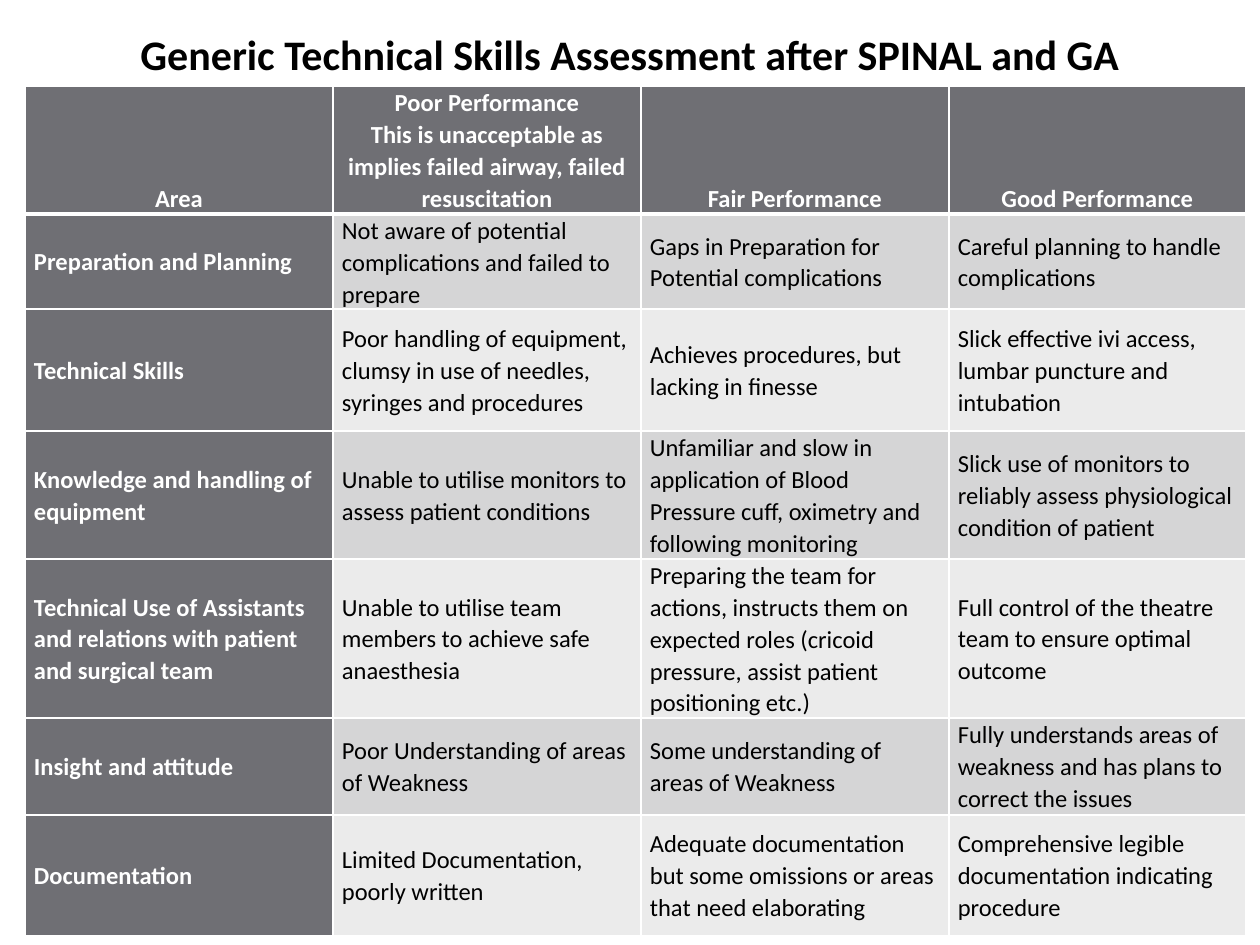
from lxml.etree import SubElement
from pptx import Presentation
from pptx.dml.color import RGBColor
from pptx.enum.text import MSO_ANCHOR, PP_ALIGN
from pptx.oxml.ns import qn
from pptx.util import Pt

PX = 914400 // 126
WHITE, BLACK, GREY = "FFFFFF", "000000", "6F6F74"
BANDS = ["D5D5D6", "EBEBEB"]
COLUMN_WIDTHS = [308, 308, 308, 297]
ROW_HEIGHTS = [128, 95, 122, 128, 159, 97, 121]
ROWS = [
    ["Area",
     "Poor Performance\nThis is unacceptable as implies failed airway, failed resuscitation",
     "Fair Performance",
     "Good Performance"],
    ["Preparation and Planning",
     "Not aware of potential complications and failed to prepare",
     "Gaps in Preparation for Potential complications",
     "Careful planning to handle complications"],
    ["Technical Skills",
     "Poor handling of equipment, clumsy in use of needles, syringes and procedures",
     "Achieves procedures, but lacking in finesse",
     "Slick effective ivi access, lumbar puncture and intubation"],
    ["Knowledge and handling of equipment",
     "Unable to utilise monitors to assess patient conditions",
     "Unfamiliar and slow in application of Blood Pressure cuff, oximetry and following monitoring",
     "Slick use of monitors to reliably assess physiological condition of patient"],
    ["Technical Use of Assistants and relations with patient and surgical team",
     "Unable to utilise team members to achieve safe anaesthesia",
     "Preparing the team for actions, instructs them on expected roles "
     "(cricoid pressure, assist patient positioning etc.)",
     "Full control of the theatre team to ensure optimal outcome"],
    ["Insight and attitude",
     "Poor Understanding of areas of Weakness",
     "Some understanding of areas of Weakness",
     "Fully understands areas of weakness and has plans to correct the issues"],
    ["Documentation",
     "Limited Documentation, poorly written",
     "Adequate documentation but some omissions or areas that need elaborating",
     "Comprehensive legible documentation indicating procedure"],
]


def color(value):
    return RGBColor.from_string(value)


def write(text_frame, text, size, text_color, bold, alignment, spacing):
    text_frame.text = text
    text_frame.word_wrap = True
    font_format = {"name": "Calibri", "size": Pt(size), "bold": bold}
    for paragraph in text_frame.paragraphs:
        paragraph.alignment = alignment
        paragraph.line_spacing = spacing
        font = paragraph.runs[0].font
        for name, value in font_format.items():
            setattr(font, name, value)
        font.color.rgb = color(text_color)


presentation = Presentation()
presentation.slide_width = 1260 * PX
presentation.slide_height = 945 * PX
slide = presentation.slides.add_slide(presentation.slide_layouts[6])

title = slide.shapes.add_textbox(63 * PX, 28 * PX, 1134 * PX, 52 * PX)
title.text_frame.vertical_anchor = MSO_ANCHOR.MIDDLE
title.text_frame.margin_top = title.text_frame.margin_bottom = 0
write(title.text_frame, "Generic Technical Skills Assessment after SPINAL and GA",
      24, BLACK, True, PP_ALIGN.CENTER, 1.0)

table = slide.shapes.add_table(
    len(ROW_HEIGHTS), len(COLUMN_WIDTHS), 25 * PX, 86 * PX,
    sum(COLUMN_WIDTHS) * PX, sum(ROW_HEIGHTS) * PX).table
for column, width in zip(table.columns, COLUMN_WIDTHS):
    column.width = width * PX
for row, height in zip(table.rows, ROW_HEIGHTS):
    row.height = height * PX

for row_index, texts in enumerate(ROWS):
    header = row_index == 0
    for column_index, text in enumerate(texts):
        cell = table.cell(row_index, column_index)
        label = header or column_index == 0
        cell_format = {
            "margin_left": 9 * PX, "margin_right": 9 * PX,
            "margin_top": 0, "margin_bottom": 0,
            "vertical_anchor": MSO_ANCHOR.BOTTOM if header else MSO_ANCHOR.MIDDLE,
        }
        for name, value in cell_format.items():
            setattr(cell, name, value)
        write(cell.text_frame, text, 14, WHITE if label else BLACK, label,
              PP_ALIGN.CENTER if header else PP_ALIGN.LEFT, 1.07)
        properties = cell._tc.get_or_add_tcPr()
        for side in ["lnL", "lnR", "lnT", "lnB"]:
            thick = (header and side == "lnB") or (row_index == 1 and side == "lnT")
            line = SubElement(properties, qn("a:" + side), w=str(Pt(3 if thick else 1)))
            fill = SubElement(line, qn("a:solidFill"))
            SubElement(fill, qn("a:srgbClr"), val=WHITE)
        cell.fill.solid()
        cell.fill.fore_color.rgb = color(GREY if label else BANDS[(row_index - 1) % 2])

presentation.save("out.pptx")
